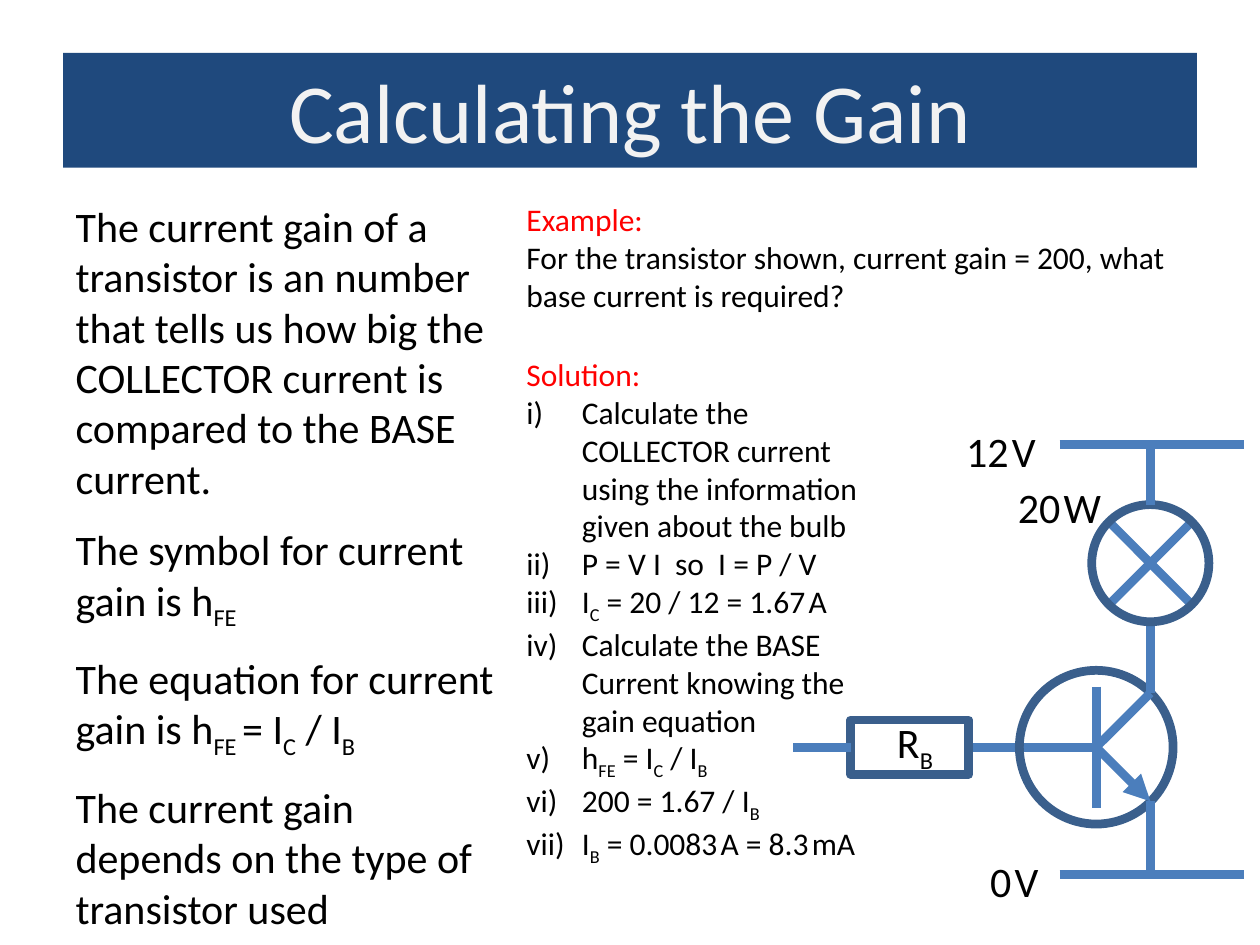
from pptx import Presentation
from pptx.dml.color import RGBColor
from pptx.enum.shapes import MSO_CONNECTOR, MSO_SHAPE
from pptx.enum.text import MSO_ANCHOR, MSO_AUTO_SIZE, PP_ALIGN
from pptx.oxml.ns import qn
from pptx.util import Inches, Pt
from lxml import etree

STRAIGHT = MSO_CONNECTOR.STRAIGHT
OVAL, RECTANGLE = MSO_SHAPE.OVAL, MSO_SHAPE.RECTANGLE
CENTER, LEFT = PP_ALIGN.CENTER, PP_ALIGN.LEFT
TOP, MIDDLE = MSO_ANCHOR.TOP, MSO_ANCHOR.MIDDLE
NO_FIT = MSO_AUTO_SIZE.NONE

COLORS = {
    "banner": "1F497D",
    "banner_text": "F2F2F2",
    "text": "000000",
    "heading": "FF0000",
    "wire": "4B7EBC",
    "outline": "3A5F8C",
}
FONT = "Calibri"
SMALL_SPACE = 8
STROKE = 5

EXPLANATION = [
    "The current gain of a transistor is an number that tells us how big the "
    "COLLECTOR current is compared to the BASE current.",
    "The symbol for current gain is h|_FE",
    "The equation for current gain is h|_FE |= I|_C| / I|_B",
    "The current gain depends on the type of transistor used",
]
QUESTION = "For the transistor shown, current gain = 200, what base current is required?"
STEPS = [
    "Calculate the COLLECTOR current using the information given about the bulb",
    "P = V I  so  I = P / V",
    "I|_C| = 20 / 12 = 1.67| |A",
    "Calculate the BASE Current knowing the gain equation",
    "h|_FE| = I|_C| / I|_B",
    "200 = 1.67 / I|_B",
    "I|_B| = 0.0083| |A = 8.3| |mA",
]


def color(key):
    return RGBColor.from_string(COLORS[key])


def write(paragraph, text, size=24, ink="text", align=LEFT, after=0, numbered=False):
    """Pieces are split by |; a leading _ marks a subscript, a lone space a thin gap."""
    paragraph.alignment = align
    paragraph.space_before = Pt(0)
    paragraph.space_after = Pt(after)
    indent = Inches(0.44) if numbered else 0
    properties = paragraph._p.get_or_add_pPr()
    properties.set("marL", str(indent))
    properties.set("indent", str(-indent))
    if numbered:
        etree.SubElement(properties, qn("a:buFont"), typeface="+mj-lt")
        etree.SubElement(properties, qn("a:buAutoNum"), type="romanLcParenR")
    else:
        etree.SubElement(properties, qn("a:buNone"))
    for piece in text.split("|"):
        run = paragraph.add_run()
        run.text = piece.removeprefix("_")
        run.font.name = FONT
        run.font.size = Pt(SMALL_SPACE if piece == " " else size)
        run.font.color.rgb = color(ink)
        if piece.startswith("_"):
            run._r.get_or_add_rPr().set("baseline", "-25000")


class GainSlide:
    def __init__(self, presentation):
        self.slide = presentation.slides.add_slide(presentation.slide_layouts[1])
        self.shapes = self.slide.shapes

    def fill_frame(self, frame, entries, anchor=TOP, wrap=True):
        frame.word_wrap = wrap
        frame.auto_size = NO_FIT
        frame.vertical_anchor = anchor
        for index, (text, style) in enumerate(entries):
            paragraph = frame.add_paragraph() if index else frame.paragraphs[0]
            write(paragraph, text, **style)

    def placeholder(self, index, box, entries, anchor=TOP, fill=None):
        holder = self.slide.placeholders[index]
        holder.left, holder.top, holder.width, holder.height = map(Inches, box)
        if fill:
            holder.fill.solid()
            holder.fill.fore_color.rgb = color(fill)
        self.fill_frame(holder.text_frame, entries, anchor)

    def text(self, box, entries, wrap=True):
        frame = self.shapes.add_textbox(*map(Inches, box)).text_frame
        self.fill_frame(frame, entries, wrap=wrap)

    def wire(self, start, end, arrow=False):
        wire = self.shapes.add_connector(STRAIGHT, *map(Inches, start + end))
        wire.line.color.rgb = color("wire")
        wire.line.width = Pt(STROKE)
        if arrow:
            etree.SubElement(wire.line._get_or_add_ln(), qn("a:tailEnd"), type="triangle")
        etree.SubElement(wire._element.spPr, qn("a:effectLst"))

    def outline(self, kind, center, width, height):
        box = (center[0] - width / 2, center[1] - height / 2, width, height)
        part = self.shapes.add_shape(kind, *map(Inches, box))
        part.shadow.inherit = False
        part.fill.background()
        part.line.color.rgb = color("outline")
        part.line.width = Pt(STROKE)

    def circuit(self):
        base_x, base_y = 8.7, 5.93
        main_x, supply_y, ground_y = 9.13, 3.53, 6.94
        lamp_y, lamp_size, cross = 4.47, 0.93, 0.33
        spread, bar = 0.43, 0.48
        resistor_x, resistor_width = 7.22, 0.94
        resistor_left = resistor_x - resistor_width / 2
        resistor_right = resistor_x + resistor_width / 2
        base = (base_x, base_y)
        collector = (main_x, base_y - spread)
        emitter = (main_x, base_y + spread)

        for side in (-1, 1):
            self.wire((main_x - cross, lamp_y + side * cross),
                      (main_x + cross, lamp_y - side * cross))
        self.wire((base_x, base_y - bar), (base_x, base_y + bar))
        self.wire((resistor_right, base_y), base)
        self.outline(OVAL, base, 1.22, 1.22)
        self.wire(base, collector)
        self.wire(base, emitter, arrow=True)
        self.wire(collector, (main_x, lamp_y + lamp_size / 2))
        self.wire(emitter, (main_x, ground_y))
        self.outline(OVAL, (main_x, lamp_y), lamp_size, lamp_size)
        self.wire((main_x, lamp_y - lamp_size / 2), (main_x, supply_y))
        for rail_y in (supply_y, ground_y):
            self.wire((8.41, rail_y), (9.87, rail_y))
        self.outline(RECTANGLE, (resistor_x, base_y), resistor_width, 0.43)
        self.wire((resistor_left, base_y), (6.29, base_y))

        for label, left, top, width in (
            ("12| |V", 7.57, 3.33, 0.76),
            ("0| |V", 7.76, 6.74, 0.59),
            ("R|_B", 7.02, 5.64, 0.51),
            ("20| |W", 7.98, 3.77, 0.87),
        ):
            self.text((left, top, width, 0.5), [(label, {})], wrap=False)


def main():
    presentation = Presentation()
    presentation.slide_width, presentation.slide_height = Inches(10), Inches(7.5)
    page = GainSlide(presentation)
    heading = {"size": 18, "ink": "heading"}
    title_style = {"size": 48, "ink": "banner_text", "align": CENTER}
    page.placeholder(0, (0.5, 0.42, 9, 0.91), [("Calculating the Gain", title_style)],
                     anchor=MIDDLE, fill="banner")
    page.placeholder(1, (0.5, 1.54, 3.58, 5.73),
                     [(text, {"after": 12}) for text in EXPLANATION])
    page.circuit()
    page.text((4.08, 1.54, 5.67, 1.01),
              [("Example:", heading), (QUESTION, {"size": 18})])
    page.text((4.08, 2.77, 3.04, 4.04),
              [("Solution:", heading)]
              + [(step, {"size": 18, "numbered": True}) for step in STEPS])
    presentation.save("out.pptx")


if __name__ == "__main__":
    main()
